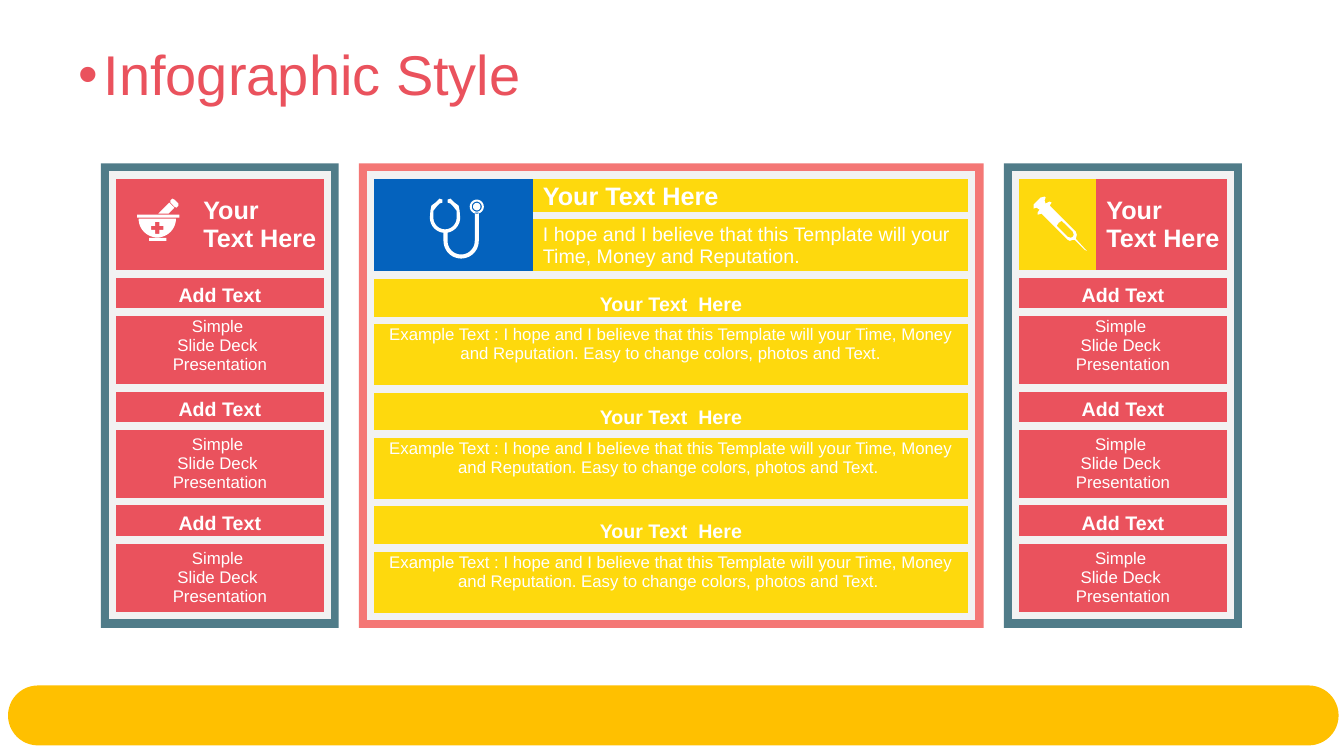
from dataclasses import dataclass
from math import cos, radians, sin

from lxml.etree import SubElement
from pptx import Presentation
from pptx.dml.color import RGBColor
from pptx.enum.shapes import MSO_SHAPE
from pptx.enum.text import MSO_ANCHOR, PP_ALIGN
from pptx.oxml.ns import qn
from pptx.util import Inches, Pt

COLORS = {
    "red": "EA525D", "coral": "F47775", "teal": "507C89", "yellow": "FED90D",
    "amber": "FFC000", "blue": "0462BD", "pale": "F2F2F2", "white": "FFFFFF",
}
COLS, ROWS = 40, 30
NO_TABLE_STYLE = "{2D5ABB26-0587-4C30-8999-92F81FD0307C}"
TOP, MIDDLE, BOTTOM = MSO_ANCHOR.TOP, MSO_ANCHOR.MIDDLE, MSO_ANCHOR.BOTTOM
LEFT, CENTER = PP_ALIGN.LEFT, PP_ALIGN.CENTER
Points = list[tuple[float, float]]

prs = Presentation()
prs.slide_width, prs.slide_height = Inches(13.33), Inches(7.5)
s = prs.slides.add_slide(prs.slide_layouts[6])


@dataclass
class Cell:
    row: int
    col: int
    lines: list[str]
    fill: str
    sides: str
    size: int = 18
    bold: bool = False
    anchor: MSO_ANCHOR = MIDDLE
    align: PP_ALIGN = LEFT
    row_span: int = 1
    col_span: int = 1


@dataclass
class Panel:
    left: float
    width: float
    frame: str
    cols: list[float]
    rows: list[float]
    cells: list[Cell]


@dataclass
class Icon:
    left: float
    top: float
    contours: list[Points]


def col(n: float) -> int:
    return round(prs.slide_width * n / COLS)


def row(n: float) -> int:
    return round(prs.slide_height * n / ROWS)


def rgb(name: str) -> RGBColor:
    return RGBColor.from_string(COLORS[name])


def paint(sp, fill: str) -> None:
    sp.shadow.inherit = False
    sp.fill.solid()
    sp.fill.fore_color.rgb = rgb(fill)
    sp.line.fill.background()


def add_block(kind: MSO_SHAPE, x: float, y: float, w: float, h: float, fill: str):
    sp = s.shapes.add_shape(kind, col(x), row(y), col(w), row(h))
    paint(sp, fill)
    return sp


def add_run(p, text: str, size: int, color: str, bold: bool = False) -> None:
    r = p.add_run()
    r.text = text
    for name, value in {"name": "Arial", "size": Pt(size), "bold": bold}.items():
        setattr(r.font, name, value)
    r.font.color.rgb = rgb(color)


def add_borders(cell, sides: str) -> None:
    pr = cell._tc.get_or_add_tcPr()
    for i, side in enumerate(x for x in "LRTB" if x in sides):
        ln = SubElement(pr, qn(f"a:ln{side}"), w=str(Pt(6)))
        SubElement(SubElement(ln, qn("a:solidFill")), qn("a:srgbClr"), val=COLORS["pale"])
        pr.remove(ln)
        pr.insert(i, ln)


def fill_cell(table, c: Cell) -> None:
    cell = table.cell(c.row, c.col)
    if c.row_span * c.col_span > 1:
        cell.merge(table.cell(c.row + c.row_span - 1, c.col + c.col_span - 1))
    for i in range(c.row_span):
        for j in range(c.col_span):
            part = table.cell(c.row + i, c.col + j)
            part.fill.solid()
            part.fill.fore_color.rgb = rgb(c.fill)
            add_borders(part, c.sides.replace("L", "") if j else c.sides)
    cell.vertical_anchor = c.anchor
    tf = cell.text_frame
    for i, line in enumerate(c.lines):
        p = tf.add_paragraph() if i else tf.paragraphs[0]
        p.alignment = c.align
        add_run(p, line, c.size, "white", c.bold)


def add_panel(panel: Panel) -> None:
    add_block(MSO_SHAPE.RECTANGLE, panel.left, 6.48, panel.width, 18.44, panel.frame)
    frame = s.shapes.add_table(
        len(panel.rows), len(panel.cols), col(panel.left + 0.35), row(6.95),
        col(sum(panel.cols)), row(sum(panel.rows)))
    table = frame.table
    table._tbl.tblPr.find(qn("a:tableStyleId")).text = NO_TABLE_STYLE
    table.first_row = table.horz_banding = False
    for column, n in zip(table.columns, panel.cols):
        column.width = col(n)
    for line, n in zip(table.rows, panel.rows):
        line.height = row(n)
    for c in panel.cells:
        fill_cell(table, c)


def section(first: int, fill: str, heading: str, body: list[str], anchor: MSO_ANCHOR) -> list[Cell]:
    return [
        Cell(first, 0, [heading], fill, "LRT", 14, True, BOTTOM, CENTER, col_span=2),
        Cell(first + 1, 0, body, fill, "LRB", 12, False, anchor, CENTER, col_span=2),
    ]


def side_panel(left: float, icon_fill: str) -> Panel:
    cells = [
        Cell(0, 0, [], icon_fill, "LTB"),
        Cell(0, 1, ["Your", "Text Here"], "red", "RTB", bold=True),
    ]
    for i in range(3):
        cells += section(1 + 2 * i, "red", "Add Text",
                         ["Simple ", "Slide Deck ", "Presentation"], MIDDLE if i else TOP)
    return Panel(left, 7.08, "teal", [2.4, 3.99], [3.92] + [1.52, 3] * 3, cells)


def main_panel() -> Panel:
    cells = [
        Cell(0, 0, [], "blue", "LTB", row_span=2),
        Cell(0, 1, ["Your Text Here"], "yellow", "RTB", bold=True, anchor=BOTTOM),
        Cell(1, 1, ["I hope and I believe that this Template will your Time, "
                    "Money and Reputation."], "yellow", "RTB", 14),
    ]
    example = ("Example Text : I hope and I believe that this Template will your Time, Money "
               "and Reputation. Easy to change colors, photos and Text.")
    for i in range(3):
        cells += section(2 + 2 * i, "yellow", "Your Text  Here", [example + (" " if i else "")], TOP)
    return Panel(10.68, 18.6, "coral", [4.83, 13.05], [1.6, 2.36] + [1.8, 2.72] * 3, cells)


def arc(x: float, y: float, radius: float, start: int, end: int) -> Points:
    angles = [radians(start + (end - start) * i / 24) for i in range(25)]
    return [(x + radius * cos(a), y + radius * sin(a)) for a in angles]


def box(x1: float, y1: float, x2: float, y2: float) -> Points:
    return [(x1, y1), (x2, y1), (x2, y2), (x1, y2)]


def add_icon(icon: Icon) -> None:
    unit = col(0.03)
    contours = [[(x * unit, y * unit) for x, y in c] for c in icon.contours]
    builder = s.shapes.build_freeform(*contours[0][0], scale=1.0)
    for i, points in enumerate(contours):
        if i:
            builder.move_to(*points[0])
        builder.add_line_segments(points[1:], close=True)
    paint(builder.convert_to_shape(col(icon.left), row(icon.top)), "white")


mortar = Icon(4.08, 7.88, [
    box(12, 39, 29, 42), box(0, 16, 42, 19), arc(20, 20, 18.5, 0, 180),
    [(18, 23), (18, 27), (14, 27), (14, 31), (18, 31), (18, 35),
     (22, 35), (22, 31), (26, 31), (26, 27), (22, 27), (22, 23)],
    [(32, 4), (37, 9), (31, 15), (21, 15)],
    [(35, 0), (37, 1), (41, 5), (41, 7), (39, 9), (37, 8), (33, 4), (33, 2)],
])
syringe = Icon(30.73, 7.8, [
    [(12, 0), (13, 1), (12, 4), (13, 7), (17, 5), (19, 6), (17, 9), (43, 35), (44, 38),
     (43, 42), (54, 54), (52, 53), (42, 43), (40, 43), (37, 44), (35, 43), (9, 17), (5, 18),
     (5, 16), (7, 13), (4, 11), (1, 12), (1, 8), (5, 4), (8, 1)],
    [(29, 24), (26, 26), (24, 29), (35, 40), (38, 41), (40, 40), (41, 38), (40, 35)],
])
stethoscope = Icon(12.78, 7.88, [
    [(10, 0), (13, 1), (13, 4), (10, 5), (8, 7), (4, 12)] + arc(15.5, 19, 11.5, 180, 0)
    + [(27, 12), (23, 7), (21, 5), (18, 4), (18, 1), (21, 0), (25, 4), (29, 7), (30, 12)]
    + arc(15.5, 19, 15, 0, 180) + [(1, 12), (2, 7), (6, 4)],
    [(14, 34)] + arc(31.5, 42, 17.5, 180, 0) + [(49, 14), (45, 14)]
    + arc(31.5, 42, 13.5, 0, 180) + [(18, 34)],
    arc(47, 8, 7, 0, 360), arc(47, 8, 5, 0, 360), arc(47, 8, 3.7, 0, 360),
])

bar = add_block(MSO_SHAPE.ROUNDED_RECTANGLE, 0.24, 27.2, 39.6, 2.38, "amber")
bar.adjustments[0] = 0.5

tf = s.shapes.add_textbox(col(2.04), row(1.48), col(37.9), row(3.16)).text_frame
tf.word_wrap, tf.vertical_anchor = True, MIDDLE
p = tf.paragraphs[0]
p.line_spacing = 0.9
pr = p._p.get_or_add_pPr()
pr.set("marL", str(Inches(0.25)))
pr.set("indent", str(Inches(-0.25)))
SubElement(pr, qn("a:buFont"), typeface="Arial")
SubElement(pr, qn("a:buChar"), char="•")
add_run(p, "Infographic Style", 40, "red")

for panel in (side_panel(29.88, "yellow"), main_panel(), side_panel(3, "red")):
    add_panel(panel)
for icon in (mortar, syringe, stethoscope):
    add_icon(icon)

prs.save("out.pptx")
